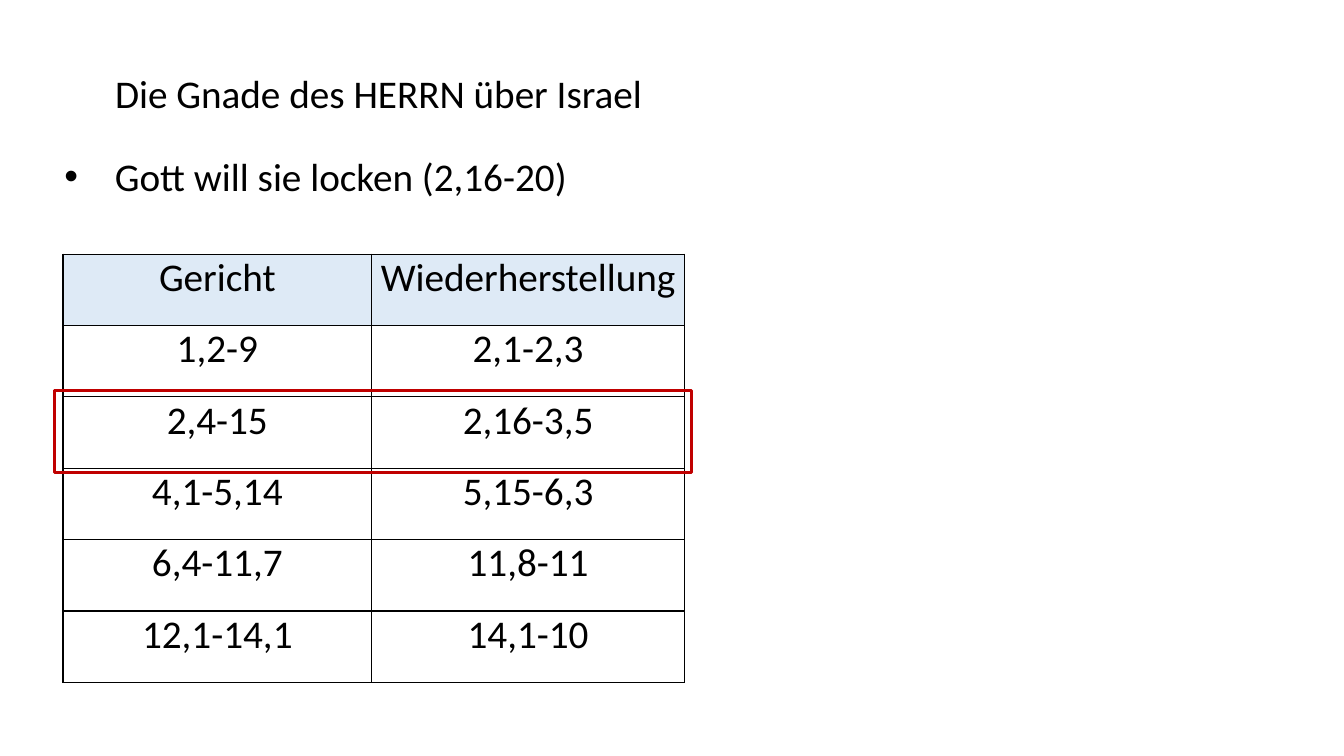
from dataclasses import dataclass

from lxml.etree import SubElement
from pptx import Presentation
from pptx.dml.color import RGBColor
from pptx.enum.shapes import MSO_SHAPE
from pptx.enum.text import MSO_ANCHOR, MSO_AUTO_SIZE, PP_ALIGN
from pptx.oxml.ns import qn
from pptx.util import Emu, Pt


@dataclass(frozen=True)
class Theme:
    font: str = "Calibri"
    size: int = 28
    ink: str = "000000"
    header: str = "DEEAF6"
    accent: str = "C00000"
    border: float = 1
    frame: float = 2.25


THEME = Theme()
PASSAGES = [
    ("Gericht", "Wiederherstellung"),
    ("1,2-9", "2,1-2,3"),
    ("2,4-15", "2,16-3,5"),
    ("4,1-5,14", "5,15-6,3"),
    ("6,4-11,7", "11,8-11"),
    ("12,1-14,1", "14,1-10"),
]
COLUMN_WIDTHS = (294, 298)
ROW_HEIGHT = 68
CURRENT_ROW = 2


def px(length):
    return Emu(length * 9525)


def apply(target, values):
    for name, value in values.items():
        setattr(target, name, value)


def write(frame, text, align=PP_ALIGN.LEFT):
    para = frame.paragraphs[0]
    para.alignment = align
    span = para.add_run()
    span.text = text
    apply(span.font, {"name": THEME.font, "size": Pt(THEME.size), "bold": False})
    span.font.color.rgb = RGBColor.from_string(THEME.ink)
    return para


def add_title(page, box):
    title = page.shapes.title
    apply(title, dict(zip(("left", "top", "width", "height"), map(px, box))))
    apply(title.text_frame, {
        "word_wrap": False,
        "auto_size": MSO_AUTO_SIZE.NONE,
        "vertical_anchor": MSO_ANCHOR.TOP,
    })
    write(title.text_frame, "Die Gnade des HERRN über Israel")


def add_bullet(page, box):
    frame = page.shapes.add_textbox(*map(px, box)).text_frame
    frame.word_wrap = True
    para = write(frame, "Gott will sie locken (2,16-20)")
    properties = para._p.get_or_add_pPr()
    properties.set("marL", str(px(48)))
    properties.set("indent", str(px(-48)))
    SubElement(properties, qn("a:buFont"), typeface="Arial")
    SubElement(properties, qn("a:buChar"), char="•")


def add_borders(cell):
    properties = cell._tc.get_or_add_tcPr()
    for side in ("lnL", "lnR", "lnT", "lnB"):
        line = SubElement(properties, qn(f"a:{side}"), w=str(Pt(THEME.border)))
        fill = SubElement(line, qn("a:solidFill"))
        SubElement(fill, qn("a:srgbClr"), val=THEME.ink)


def add_passages(page, box):
    table = page.shapes.add_table(len(PASSAGES), len(COLUMN_WIDTHS), *map(px, box)).table
    apply(table, {"first_row": False, "horz_banding": False})
    for column, width in zip(table.columns, COLUMN_WIDTHS):
        column.width = px(width)
    for row_index, texts in enumerate(PASSAGES):
        table.rows[row_index].height = px(ROW_HEIGHT)
        for column_index, text in enumerate(texts):
            cell = table.cell(row_index, column_index)
            apply(cell, {
                "margin_left": px(7),
                "margin_right": px(7),
                "margin_top": 0,
                "margin_bottom": 0,
            })
            add_borders(cell)
            if row_index == 0:
                cell.fill.solid()
                cell.fill.fore_color.rgb = RGBColor.from_string(THEME.header)
            else:
                cell.fill.background()
            write(cell.text_frame, text, PP_ALIGN.CENTER)


def add_row_frame(page, box):
    left, top, width, _ = box
    row_top = top + CURRENT_ROW * ROW_HEIGHT
    frame_box = (left - 8, row_top - 6, width + 15, ROW_HEIGHT + 10)
    frame = page.shapes.add_shape(MSO_SHAPE.RECTANGLE, *map(px, frame_box))
    frame.shadow.inherit = False
    frame.fill.background()
    frame.line.color.rgb = RGBColor.from_string(THEME.accent)
    frame.line.width = Pt(THEME.frame)


def main():
    deck = Presentation()
    apply(deck, {"slide_width": px(1280), "slide_height": px(720)})
    page = deck.slides.add_slide(deck.slide_layouts[5])
    table_box = (60, 242, sum(COLUMN_WIDTHS), ROW_HEIGHT * len(PASSAGES))
    add_title(page, (100, 61, 527, 55))
    add_bullet(page, (52, 140, 659, 55))
    add_passages(page, table_box)
    add_row_frame(page, table_box)
    deck.save("out.pptx")


if __name__ == "__main__":
    main()
